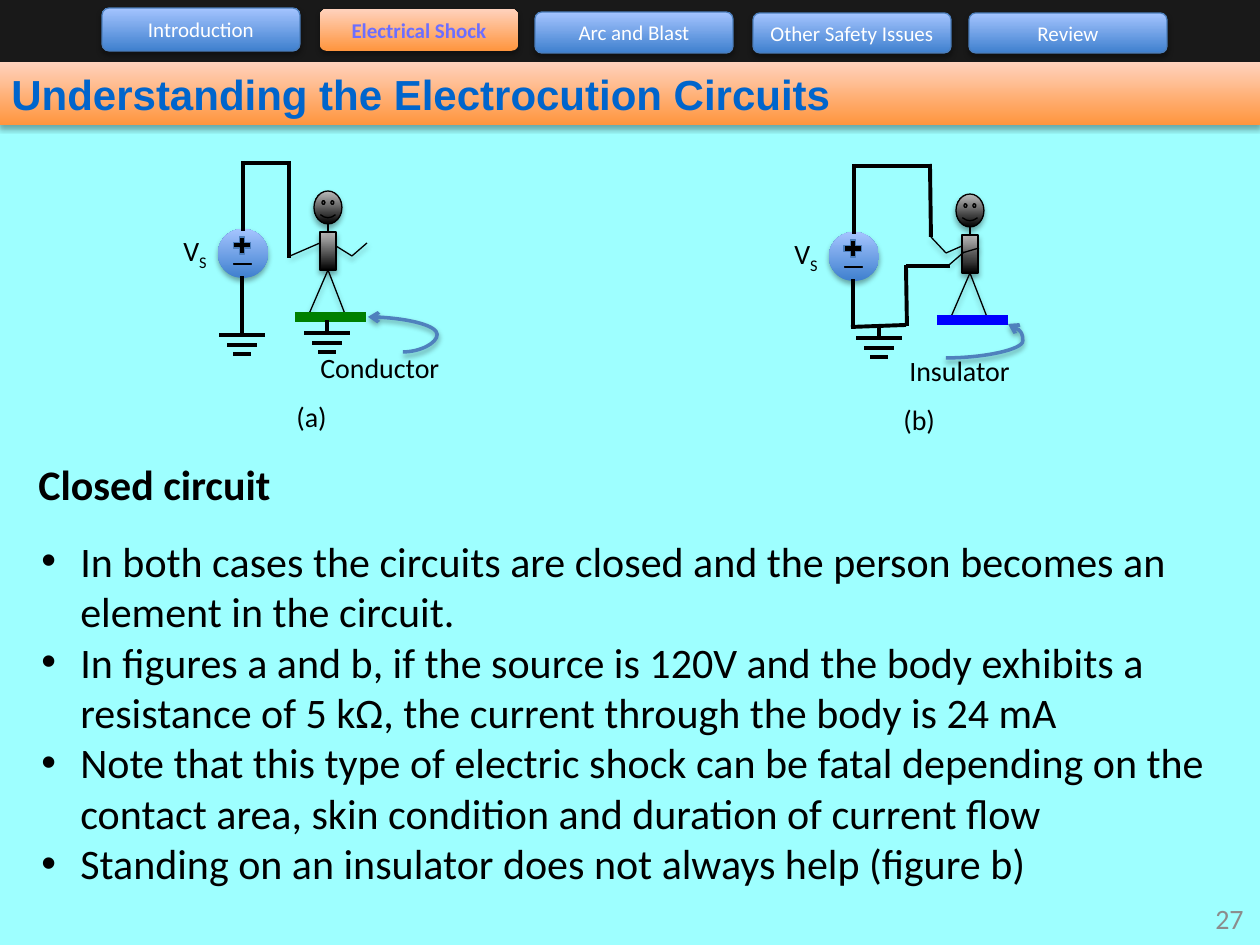
from lxml.etree import SubElement
from pptx import Presentation
from pptx.dml.color import RGBColor
from pptx.enum.shapes import MSO_CONNECTOR, MSO_SHAPE
from pptx.enum.text import MSO_ANCHOR, PP_ALIGN
from pptx.oxml.ns import qn
from pptx.util import Emu, Pt

SCALE = 914400 / 126  # EMU per px

BLACK = RGBColor(0x00, 0x00, 0x00)
WHITE = RGBColor(0xFF, 0xFF, 0xFF)
CYAN = RGBColor(0x9E, 0xFF, 0xFF)
BAR = RGBColor(0x19, 0x19, 0x19)
GREY = RGBColor(0x8C, 0x8C, 0x8C)
GREEN = RGBColor(0x00, 0x80, 0x00)
BLUE = RGBColor(0x00, 0x00, 0xFF)
ARROW = RGBColor(0x4F, 0x81, 0xBD)
OUTLINE = RGBColor(0x4B, 0x7E, 0xBC)
TITLE = RGBColor(0x00, 0x65, 0xCC)
ACTIVE = RGBColor(0x6C, 0x6E, 0xFF)
# Gradients run from bottom to top
ORANGE_GRAD = (RGBColor(0xFF, 0x95, 0x3E), RGBColor(0xFF, 0xD2, 0xBD))
BLUE_GRAD = (RGBColor(0x3F, 0x80, 0xCE), RGBColor(0xA4, 0xC4, 0xFF))
DARK_GRAD = (BLACK, RGBColor(0xBD, 0xBD, 0xBD))


def px(n):
    return Emu(round(n * SCALE))


def write(p, text, size=16, color=BLACK, font="Calibri", bold=False, base=None, align=None):
    r = p.add_run()
    r.text = text
    r.font.size, r.font.name, r.font.bold = Pt(size), font, bold
    r.font.color.rgb = color
    if base is not None:
        r._r.get_or_add_rPr().set("baseline", str(base * 1000))
    if align is not None:
        p.alignment = align


def add_shadow(effects):
    shadow = SubElement(effects, qn("a:outerShdw"), blurRad="39400", dist="22900",
                        dir="5400000", rotWithShape="0")
    color = SubElement(shadow, qn("a:srgbClr"), val="000000")
    SubElement(color, qn("a:alpha"), val="35000")


class Deck:
    def __init__(self):
        self.prs = Presentation()
        self.prs.slide_width, self.prs.slide_height = px(1260), px(945)
        self.s = self.prs.slides.add_slide(self.prs.slide_layouts[6])

    def shape(self, kind, x, y, w, h, fill, line=None, shadow=True):
        sp = self.s.shapes.add_shape(kind, px(x), px(y), px(w), px(h))
        sp.shadow.inherit = False
        if isinstance(fill, RGBColor):
            sp.fill.solid()
            sp.fill.fore_color.rgb = fill
        else:
            sp.fill.gradient()
            sp.fill.gradient_angle = 90
            for stop, color in zip(sp.fill.gradient_stops, fill):
                stop.color.rgb = color
        if line is None:
            sp.line.fill.background()
        else:
            sp.line.color.rgb, sp.line.width = line, Pt(0.75)
        if shadow:
            add_shadow(sp._element.spPr.find(qn("a:effectLst")))
        return sp

    def line(self, x1, y1, x2, y2, width=2.25, color=BLACK, shadow=False,
             kind=MSO_CONNECTOR.STRAIGHT):
        c = self.s.shapes.add_connector(kind, px(x1), px(y1), px(x2), px(y2))
        c.line.color.rgb, c.line.width = color, Pt(width)
        effects = SubElement(c._element.spPr, qn("a:effectLst"))
        if shadow:
            add_shadow(effects)
        return c

    def limb(self, *ends):
        return self.line(*ends, width=0.75, shadow=True)

    def arrow(self, x1, y1, x2, y2, bend):
        c = self.line(x1, y1, x2, y2, 2, ARROW, True, MSO_CONNECTOR.CURVE)
        guides = next(c._element.iter(qn("a:avLst")))
        SubElement(guides, qn("a:gd"), name="adj1", fmla=f"val {round(bend * 100000)}")
        SubElement(c._element.spPr.find(qn("a:ln")), qn("a:tailEnd"), type="arrow")

    def text(self, x, y, w, h, text, **fmt):
        tf = self.s.shapes.add_textbox(px(x), px(y), px(w), px(h)).text_frame
        tf.word_wrap = True
        write(tf.paragraphs[0], text, **fmt)
        return tf

    def bullets(self, x, y, w, h, items):
        tf = self.s.shapes.add_textbox(px(x), px(y), px(w), px(h)).text_frame
        tf.word_wrap = True
        for i, item in enumerate(items):
            p = tf.add_paragraph() if i else tf.paragraphs[0]
            pPr = p._p.get_or_add_pPr()
            pPr.set("marL", str(px(39)))
            pPr.set("indent", str(px(-39)))
            SubElement(pPr, qn("a:buFont"), typeface="Arial")
            SubElement(pPr, qn("a:buChar"), char="•")
            write(p, item, size=24)

    def person(self, x, y, platform):
        self.shape(MSO_SHAPE.SMILEY_FACE, x, y, 28, 33, DARK_GRAD, BLACK)
        body = self.shape(MSO_SHAPE.RECTANGLE, x + 6, y + 41, 16, 38, DARK_GRAD, BLACK)
        for foot in (-5, 31):
            self.limb(x + 14, y + 79, x + foot, y + 123).begin_connect(body, 2)
        self.limb(x + 14, y + 41, x + 14, y + 33).begin_connect(body, 0)
        self.line(x - 19, y + 126, x + 52, y + 126, 6, platform)

    def source(self, x, y):
        self.shape(MSO_SHAPE.OVAL, x, y, 50, 49, BLUE_GRAD)
        self.shape(MSO_SHAPE.MATH_PLUS, x + 12, y + 5, 24, 23, BLACK, OUTLINE, False)
        self.shape(MSO_SHAPE.MATH_MINUS, x + 13, y + 32, 23, 6, BLACK, BLACK, False)
        self.line(x + 25, y - 68, x + 25, y + 2)
        self.line(x + 24, y + 96, x + 24, y + 47)
        tf = self.text(x - 47, y - 2, 64, 47, "V")
        write(tf.paragraphs[0], "S", base=-25)

    def ground(self, x, y):
        self.line(x, y + 13, x, y)
        for half, drop in ((23, 13), (15, 23), (9, 32)):
            self.line(x + half, y + drop, x - half, y + drop)


def main():
    d = Deck()
    d.shape(MSO_SHAPE.RECTANGLE, 0, 108, 1260, 837, CYAN)

    # Explanation
    d.text(26, 452, 267, 63, "Closed circuit", size=24, bold=True)
    d.bullets(29, 529, 1196, 369, (
        "In both cases the circuits are closed and the person becomes an element in the circuit.",
        "In figures a and b, if the source is 120V and the body exhibits a resistance of 5 kΩ, "
        "the current through the body is 24 mA",
        "Note that this type of electric shock can be fatal depending on the contact area, "
        "skin condition and duration of current flow",
        "Standing on an insulator does not always help (figure b)",
    ))

    # Figure a: standing on a conductor
    d.person(314, 191, GREEN)
    for ends in ((320, 243, 290, 256), (336, 246, 352, 256), (352, 256, 367, 243)):
        d.limb(*ends)
    d.source(218, 229)
    d.line(289, 161, 289, 258)
    d.line(290, 163, 242, 163)
    d.ground(242, 322)
    d.ground(327, 320)
    d.arrow(403, 352, 368, 317, -0.98)
    d.text(308, 344, 179, 47, "Conductor")
    d.text(284, 393, 62, 47, "(a)")

    # Figure b: standing on an insulator
    d.person(956, 194, BLUE)
    for ends in ((962, 246, 946, 253), (979, 248, 962, 253),
                 (949, 265, 964, 252), (946, 253, 931, 237)):
        d.limb(*ends)
    d.source(829, 232)
    for ends in ((906, 325, 851, 327), (930, 164, 931, 237), (931, 166, 855, 166),
                 (907, 326, 906, 265), (950, 266, 906, 266)):
        d.line(*ends)
    d.ground(879, 325)
    d.arrow(946, 358, 1008, 324, 1.24)
    d.text(897, 347, 129, 47, "Insulator")
    d.text(891, 396, 66, 47, "(b)")

    # Title band
    band = d.shape(MSO_SHAPE.RECTANGLE, -1, 62, 1261, 63, ORANGE_GRAD)
    band.text_frame.vertical_anchor = MSO_ANCHOR.MIDDLE
    write(band.text_frame.paragraphs[0], "Understanding the Electrocution Circuits",
          size=24, color=TITLE, font="Arial", bold=True, align=PP_ALIGN.LEFT)

    # Navigation bar
    d.shape(MSO_SHAPE.RECTANGLE, 0, 0, 1260, 62, BAR, shadow=False)
    for x, y, h, label in ((320, 9, 42, "Electrical Shock"), (102, 8, 43, "Introduction"),
                           (535, 12, 41, "Arc and Blast"), (753, 13, 40, "Other Safety Issues"),
                           (969, 13, 40, "Review")):
        active = label == "Electrical Shock"
        tab = d.shape(MSO_SHAPE.ROUNDED_RECTANGLE, x, y, 198, h,
                      ORANGE_GRAD if active else BLUE_GRAD, None if active else OUTLINE)
        tab.text_frame.vertical_anchor = MSO_ANCHOR.MIDDLE
        write(tab.text_frame.paragraphs[0], label, size=12, bold=active,
              color=ACTIVE if active else WHITE, align=PP_ALIGN.CENTER)

    # Page number
    tf = d.text(1194, 893, 62, 50, "27", color=GREY, align=PP_ALIGN.RIGHT)
    tf.vertical_anchor = MSO_ANCHOR.MIDDLE

    d.prs.save("out.pptx")


if __name__ == "__main__":
    main()
